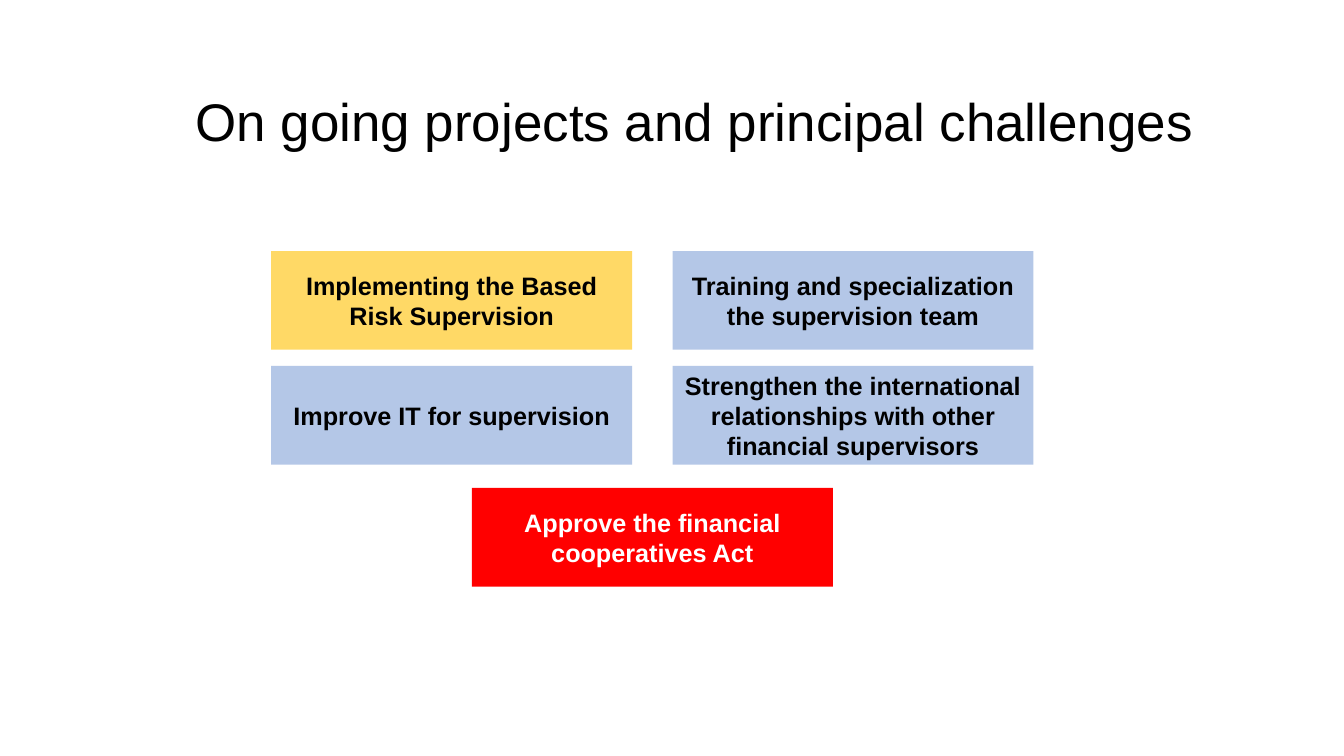
from pptx import Presentation
from pptx.dml.color import RGBColor
from pptx.enum.shapes import MSO_SHAPE
from pptx.enum.text import MSO_ANCHOR, PP_ALIGN
from pptx.util import Inches, Pt

BOX_W, BOX_H = 3.58, 0.98
COLUMN_STEP, ROW_STEP = 3.98, 1.14
BLUE, YELLOW, RED = "B4C7E7", "FFD966", "FF0000"
BLACK, WHITE = "000000", "FFFFFF"
PROJECTS = [
    [("Implementing the Based Risk Supervision", YELLOW),
     ("Training and specialization the supervision team", BLUE)],
    [("Improve IT for supervision", BLUE),
     ("Strengthen the international relationships with other financial supervisors", BLUE)],
]


def rgb(value):
    """Turn a hex string into a colour."""
    return RGBColor.from_string(value)


def write(tf, text, size, color, bold=False):
    """Write one centred paragraph and return it."""
    tf.word_wrap = True
    p = tf.paragraphs[0]
    p.text = text
    p.alignment = PP_ALIGN.CENTER
    p.font.name = "Arial"
    p.font.size = Pt(size)
    p.font.bold = bold
    p.font.color.rgb = rgb(color)
    return p


def add_title(s, left, top, width, height):
    """Place the slide title in the given box."""
    box = s.shapes.add_textbox(Inches(left), Inches(top), Inches(width), Inches(height))
    tf = box.text_frame
    tf.margin_top = Inches(0.1)
    p = write(tf, "On going projects and principal challenges", 37.8, BLACK)
    p.line_spacing = 0.7


def add_card(s, left, top, text, fill, color=BLACK):
    """Place one filled card with its label."""
    sp = s.shapes.add_shape(MSO_SHAPE.RECTANGLE, Inches(left), Inches(top),
                            Inches(BOX_W), Inches(BOX_H))
    sp.shadow.inherit = False
    sp.fill.solid()
    sp.fill.fore_color.rgb = rgb(fill)
    sp.line.fill.background()
    sp.text_frame.vertical_anchor = MSO_ANCHOR.MIDDLE
    write(sp.text_frame, text, 18, color, bold=True)


def add_projects(s, left, top):
    """Place the project grid and the centred challenge below it."""
    for row, cards in enumerate(PROJECTS):
        for column, (text, fill) in enumerate(cards):
            add_card(s, left + column * COLUMN_STEP, top + row * ROW_STEP, text, fill)
    add_card(s, left + COLUMN_STEP / 2, top + 2.35,
             "Approve the financial cooperatives Act", RED, WHITE)


def main():
    """Build the slide and save it."""
    prs = Presentation()
    prs.slide_width, prs.slide_height = Inches(13.33), Inches(7.5)
    s = prs.slides.add_slide(prs.slide_layouts[6])
    add_title(s, 1.55, 0.95, 10.67, 0.71)
    add_projects(s, 2.69, 2.49)
    prs.save("out.pptx")


if __name__ == "__main__":
    main()
